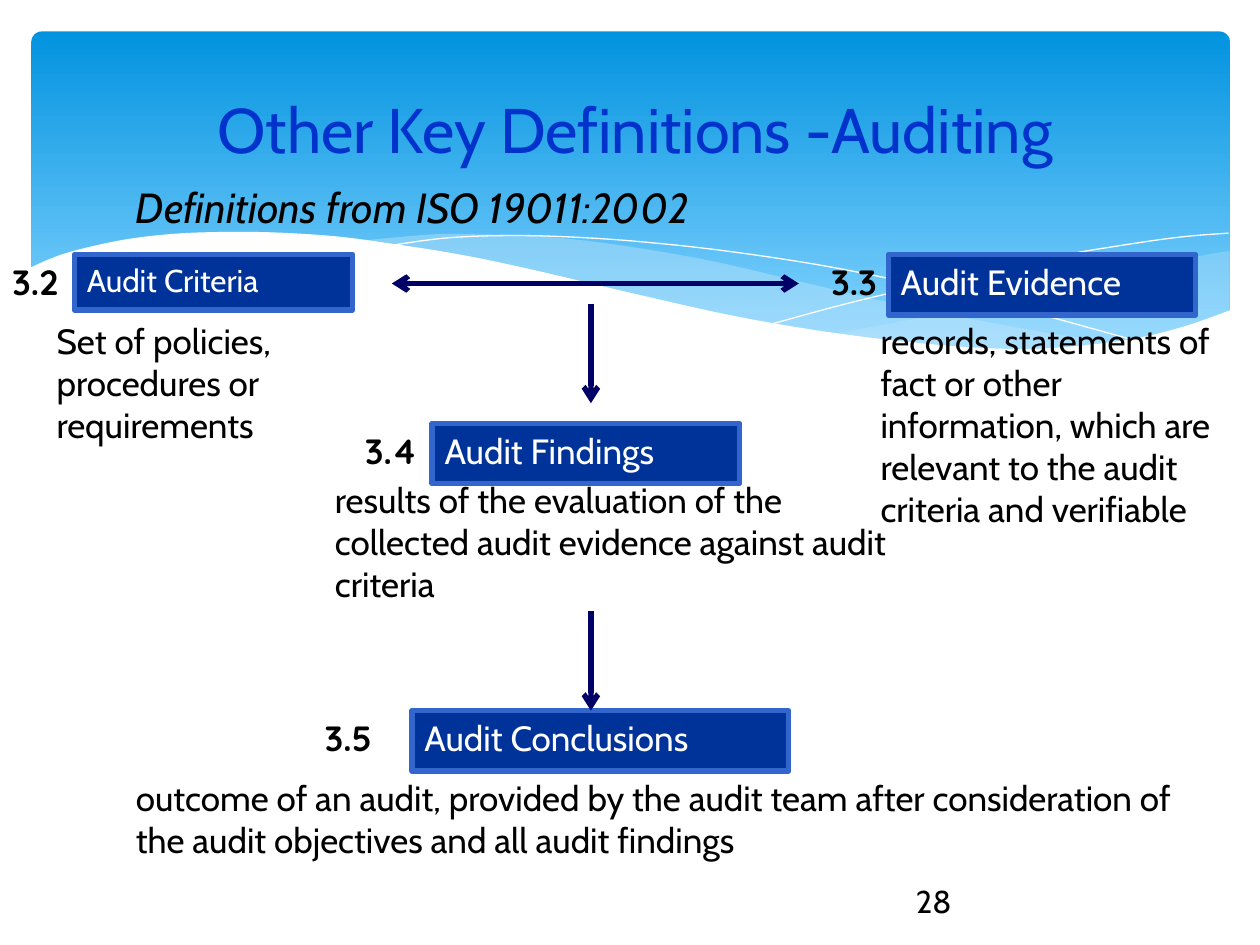
from lxml.etree import SubElement
from pptx import Presentation
from pptx.dml.color import RGBColor
from pptx.enum.shapes import MSO_CONNECTOR, MSO_SHAPE
from pptx.enum.text import MSO_ANCHOR, PP_ALIGN
from pptx.oxml.ns import qn
from pptx.util import Inches, Pt

COLORS = {
    "sky_top": "0293E0", "sky_bottom": "83D3FE", "mist": "C6E7FC", "white": "FFFFFF",
    "title": "0033CC", "box": "003399", "border": "3366CC", "arrow": "000066", "text": "000000",
}
COLUMNS, ROWS = 100, 75

# Wave edges as (column, row) anchors
RIGHT_CREST = [(97.6, 19.9), (92.1, 20.9), (86.1, 22.3), (80.5, 23.7), (75.3, 24.8), (66.1, 26.5)]
RIGHT_TROUGH = [(66.1, 26.5), (71.8, 27.2), (76.9, 27.7), (81.4, 27.8), (86.3, 27.5),
                (90.5, 26.9), (93.5, 26.1), (97.6, 24.7)]
MIDDLE_TROUGH = [(89.3, 27.3), (83.7, 26.5), (77.5, 25.4), (70.6, 24), (62.9, 22.2), (56.9, 20.8),
                 (51.4, 19.8), (46.5, 19.1), (42, 18.7), (38, 18.6), (34.4, 18.6), (28.6, 19.1)]
MIDDLE_BASE = [(28.6, 19.1), (36.2, 20.3), (44.9, 22.2), (53, 24), (60.1, 25.5), (66.5, 26.6),
               (72.2, 27.4), (77.3, 27.7), (81.8, 27.8), (85.7, 27.7), (89.3, 27.3)]
LONG_LINE = [(30.9, 19.5), (35.3, 18.9), (40.1, 18.7), (45, 18.8), (51, 19.2), (58.2, 20),
             (66.5, 21.3), (76, 23.3), (83.1, 25.1), (90.7, 27.2)]
RISING_LINE = [(61.3, 25.7), (67.2, 24.1), (74.8, 22.3), (83.6, 20.4), (89.5, 19.4), (93.8, 18.8), (97.5, 18.5)]
WHITE_CREST = [(97.7, 24.6), (94, 25.9), (89.9, 26.9), (85, 27.5), (80.9, 27.7), (76.1, 27.5), (70.8, 27),
               (64.7, 26.2), (57.9, 25), (50.3, 23.3), (41.8, 21.3), (36.5, 20.2), (31.5, 19.4),
               (27.1, 18.8), (23, 18.5), (19.3, 18.4), (14.6, 18.5), (10.6, 18.9), (7.5, 19.5),
               (5.2, 20.1), (3.6, 20.7), (2.3, 21.3)]


def smooth(anchors, steps=5):
    """Points of a Catmull-Rom curve that passes through every anchor."""
    padded = [anchors[0], *anchors, anchors[-1]]
    points = [anchors[0]]
    for a, b, c, d in zip(padded, padded[1:], padded[2:], padded[3:]):
        for step in range(1, steps + 1):
            t = step / steps
            points.append(tuple(
                (2 * q + (r - p) * t + (2 * p - 5 * q + 4 * r - s) * t ** 2
                 + (3 * q - p - 3 * r + s) * t ** 3) / 2
                for p, q, r, s in zip(a, b, c, d)))
    return points


class SlideBuilder:
    def __init__(self, presentation):
        self.column = presentation.slide_width / COLUMNS
        self.row = presentation.slide_height / ROWS
        self.slide = presentation.slides.add_slide(presentation.slide_layouts[6])
        self.shapes = self.slide.shapes

    def color(self, name):
        return RGBColor.from_string(COLORS[name])

    def place(self, *lengths):
        return [round(length * unit) for length, unit in zip(lengths, (self.column, self.row) * 2)]

    def set_text(self, shape, text, size, color="text", font="Cabin", bold=False, italic=False,
                 align=PP_ALIGN.LEFT, anchor=MSO_ANCHOR.TOP):
        frame = shape.text_frame
        frame.word_wrap = True
        frame.vertical_anchor = anchor
        frame.text = text
        paragraph = frame.paragraphs[0]
        paragraph.alignment = align
        style = paragraph.runs[0].font
        style.name, style.size, style.bold, style.italic = font, Pt(size), bold, italic
        style.color.rgb = self.color(color)

    def text(self, area, text, size=20, **style):
        self.set_text(self.shapes.add_textbox(*self.place(*area)), text, size, **style)

    def number(self, left, top, text):
        self.text((left, top, 6.3, 4.3), text, font="Quicksand", bold=True)

    def term(self, area, text, size=20):
        box = self.shapes.add_shape(MSO_SHAPE.RECTANGLE, *self.place(*area))
        box.shadow.inherit = False
        box.fill.solid()
        box.fill.fore_color.rgb = self.color("box")
        box.line.color.rgb = self.color("border")
        box.line.width = Pt(3)
        self.set_text(box, text, size, color="white")

    def arrow(self, start, end, both_ends=False):
        connector = self.shapes.add_connector(MSO_CONNECTOR.STRAIGHT, *self.place(*start, *end))
        connector.line.color.rgb = self.color("arrow")
        connector.line.width = Pt(3)
        properties = connector._element.spPr
        outline = properties.find(qn("a:ln"))
        for tag in ("a:headEnd", "a:tailEnd")[0 if both_ends else 1:]:
            SubElement(outline, qn(tag), type="arrow")
        SubElement(properties, qn("a:effectLst"))

    def sky(self, area):
        panel = self.shapes.add_shape(MSO_SHAPE.ROUNDED_RECTANGLE, *self.place(*area))
        panel.adjustments[0] = 0.03
        panel.shadow.inherit = False
        panel.line.fill.background()
        panel.fill.gradient()
        panel.fill.gradient_angle = 270
        for stop, position, name in zip(panel.fill.gradient_stops, (0, 0.9), ("sky_top", "sky_bottom")):
            stop.position = position
            stop.color.rgb = self.color(name)

    def outline(self, points, closed):
        start, *rest = [self.place(*point) for point in points]
        builder = self.shapes.build_freeform(*start, scale=1.0)
        builder.add_line_segments(rest, close=closed)
        shape = builder.convert_to_shape()
        shape.shadow.inherit = False
        return shape

    def wave(self, points, color, opacity=100):
        shape = self.outline(points, True)
        shape.line.fill.background()
        shape.fill.solid()
        shape.fill.fore_color.rgb = self.color(color)
        if opacity < 100:
            fill_color = shape._element.spPr.find(qn("a:solidFill"))[0]
            SubElement(fill_color, qn("a:alpha"), val=str(opacity * 1000))

    def wave_line(self, anchors):
        shape = self.outline(smooth(anchors), False)
        shape.fill.background()
        shape.line.color.rgb = self.color("white")
        shape.line.width = Pt(0)


def main():
    presentation = Presentation()
    presentation.slide_width, presentation.slide_height = Inches(10), Inches(7.5)
    builder = SlideBuilder(presentation)

    builder.sky((2.5, 2.5, 95.1, 27))
    builder.wave(smooth(RIGHT_CREST) + smooth(RIGHT_TROUGH), "mist", 29)
    builder.wave(smooth(MIDDLE_TROUGH) + smooth(MIDDLE_BASE), "mist", 40)
    builder.wave_line(LONG_LINE)
    builder.wave_line(RISING_LINE)
    builder.wave(smooth(WHITE_CREST) + [(2.3, 32.9), (97.7, 32.9)], "white")

    builder.text((15.8, 3.3, 69.2, 13.7), "Other Key Definitions -Auditing", 36, color="title",
                 align=PP_ALIGN.CENTER, anchor=MSO_ANCHOR.MIDDLE)

    builder.term((5.9, 20.2, 22.1, 4.4), "Audit Criteria", 18)
    builder.term((70.5, 20.2, 24.4, 4.8), "Audit Evidence")
    builder.term((34.3, 33.6, 24.4, 4.8), "Audit Findings")
    builder.term((32.7, 56.4, 29.9, 4.8), "Audit Conclusions")

    builder.arrow((31.1, 22.5), (63.4, 22.5), both_ends=True)
    for top in (24.1, 48.5):
        builder.arrow((46.9, top), (46.9, top + 7.9))

    builder.text((3.5, 24.9, 25.2, 11), "Set of policies, procedures or requirements")
    builder.text((68.9, 24.9, 31.1, 21), "records, statements of fact or other information, "
                 "which are relevant to the audit criteria and verifiable")
    builder.text((25.6, 37.5, 47.2, 11), "results of the evaluation of the collected audit evidence "
                 "against audit criteria")
    builder.text((9.8, 61.1, 84.3, 7.7), "outcome of an audit, provided by the audit team after "
                 "consideration of the audit objectives and all audit findings")

    builder.number(24.8, 56.4, "3.5")
    builder.number(0, 20.2, "3.2")
    builder.number(28, 33.6, "3.4")
    builder.number(65, 20.2, "3.3")

    builder.text((9.8, 13.9, 78, 5), "Definitions from ISO 19011:2002", 24, italic=True)
    builder.text((71.7, 69.5, 23.3, 4), "28", 18, anchor=MSO_ANCHOR.MIDDLE)

    presentation.save("out.pptx")


if __name__ == "__main__":
    main()
